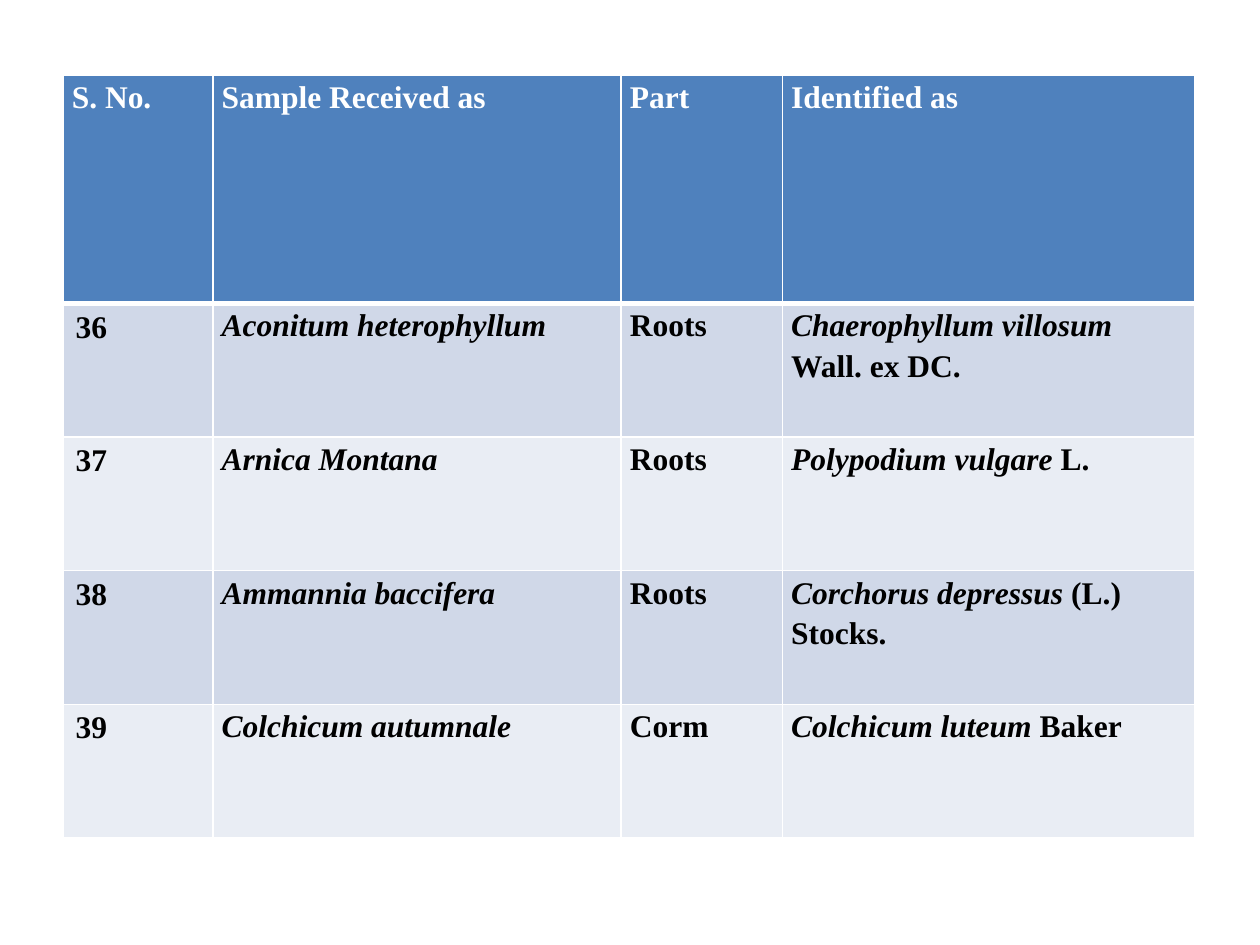
from lxml.etree import SubElement
from pptx import Presentation
from pptx.dml.color import RGBColor
from pptx.oxml.ns import qn
from pptx.util import Inches, Pt

HEAD = ["S. No.", "Sample Received as", "Part", "Identified as"]
# Number, sample, part, identified species, author
ROWS = [
    ("36", "Aconitum heterophyllum", "Roots", "Chaerophyllum villosum ", "Wall. ex DC."),
    ("37", "Arnica Montana", "Roots", "Polypodium vulgare ", "L."),
    ("38", "Ammannia baccifera", "Roots", "Corchorus depressus ", "(L.) Stocks."),
    ("39", "Colchicum autumnale", "Corm", "Colchicum luteum ", "Baker"),
]
COLS = [1.19, 3.24, 1.28, 3.27]
TALL, LOW = 1.81, 1.06
BANDS = ["D0D8E8", "E9EDF4"]
FONT = {"name": "Times New Roman", "size": Pt(18), "bold": True}
INSET = {"margin_left": Inches(0.07), "margin_right": Inches(0.07),
         "margin_top": 0, "margin_bottom": 0}
SPACING = {"line_spacing": 1.15, "space_before": Pt(10)}


def color(code):
    return RGBColor.from_string(code)


def apply(item, values):
    for key, value in values.items():
        setattr(item, key, value)


def add_lines(cell, widths):
    """Draw white cell borders; widths are points by side."""
    props = cell._tc.get_or_add_tcPr()
    for side, width in widths.items():
        line = SubElement(props, qn("a:ln" + side), w=str(Pt(width)))
        fill = SubElement(line, qn("a:solidFill"))
        SubElement(fill, qn("a:srgbClr"), val="FFFFFF")


def fill_cell(cell, runs, back, ink, tight=True):
    """Fill a cell with (text, italic) runs."""
    cell.fill.solid()
    cell.fill.fore_color.rgb = color(back)
    para = cell.text_frame.paragraphs[0]
    if tight:
        apply(cell, INSET)
        apply(para, SPACING)
    for text, slant in runs:
        run = para.add_run()
        run.text = text
        apply(run.font, {**FONT, "italic": slant})
        run.font.color.rgb = color(ink)


def add_samples(slide, left, top, width, height):
    frame = slide.shapes.add_table(len(ROWS) + 1, len(COLS), left, top, width, height)
    table = frame.table
    for col, size in zip(table.columns, COLS):
        col.width = Inches(size)
    for row, size in zip(table.rows, [TALL] + [LOW] * len(ROWS)):
        row.height = Inches(size)

    # Borders, with a thick rule under the header
    for r, row in enumerate(table.rows):
        for cell in row.cells:
            add_lines(cell, {"L": 1, "R": 1, "T": 3 if r == 1 else 1,
                             "B": 3 if r == 0 else 1})

    # Header
    for c, text in enumerate(HEAD):
        fill_cell(table.cell(0, c), [(text, False)], "4F81BD", "FFFFFF")

    # Banded body
    for r, (num, sample, part, species, author) in enumerate(ROWS):
        cells = [[(num, False)], [(sample, True)], [(part, False)],
                 [(species, True), (author, False)]]
        for c, runs in enumerate(cells):
            fill_cell(table.cell(r + 1, c), runs, BANDS[r % 2], "000000", tight=c > 0)


def main():
    deck = Presentation()
    apply(deck, {"slide_width": Inches(10), "slide_height": Inches(7.5)})
    slide = deck.slides.add_slide(deck.slide_layouts[6])
    add_samples(slide, Inches(0.5), Inches(0.6),
                Inches(sum(COLS)), Inches(TALL + LOW * len(ROWS)))
    deck.save("out.pptx")


if __name__ == "__main__":
    main()
